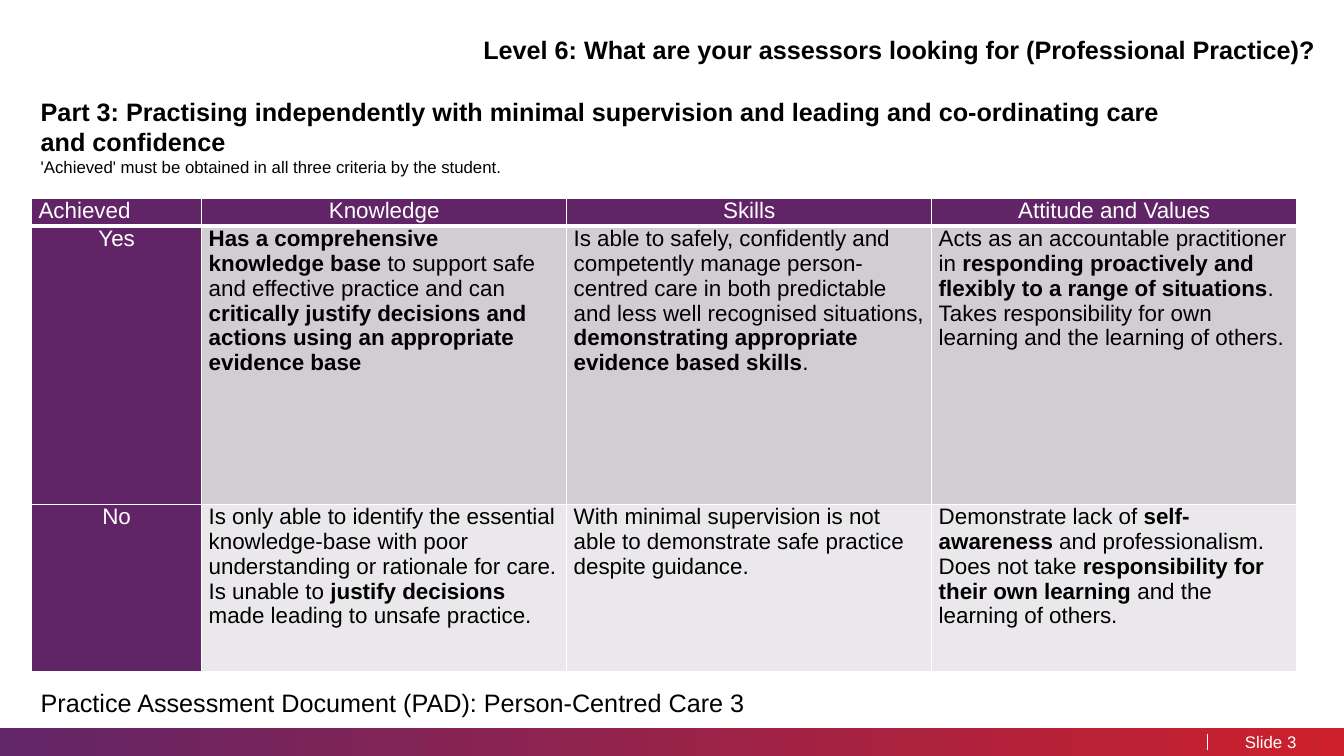
from dataclasses import dataclass

from pptx import Presentation
from pptx.dml.color import RGBColor as RGB
from pptx.enum.shapes import MSO_CONNECTOR as Connector, MSO_SHAPE as Shape
from pptx.enum.text import MSO_ANCHOR as Anchor, PP_ALIGN as Align
from pptx.oxml.ns import qn
from pptx.slide import Slide
from pptx.table import _Cell as Cell
from pptx.text.text import TextFrame, _Paragraph as Paragraph
from pptx.util import Pt
from lxml.etree import SubElement


@dataclass(frozen=True)
class Theme:
    font: str = "Arial"
    purple: str = "622567"
    red: str = "CD202C"
    head_fill: str = "612467"
    yes_fill: str = "D2CDD3"
    no_fill: str = "EAE8EB"
    white: str = "FFFFFF"
    black: str = "000000"
    heading: int = 18
    table: int = 16
    small: int = 12


THEME = Theme()


@dataclass(frozen=True)
class Line:
    text: str
    size: int
    color: str = THEME.black
    bold: bool = False
    align: Align = Align.LEFT


@dataclass(frozen=True)
class Label:
    left: float
    top: float
    width: float
    height: float
    lines: tuple[Line, ...]
    margin_x: float = 7.2
    anchor: Anchor = Anchor.TOP
    wrap: bool = True


@dataclass(frozen=True)
class Outcome:
    name: str
    height: float
    fill: str
    criteria: tuple[str, str, str]


def write_line(paragraph: Paragraph, line: Line) -> None:
    """Text between double asterisks becomes bold."""
    paragraph.alignment = line.align
    font = paragraph.font
    font.name, font.size = THEME.font, Pt(line.size)
    font.color.rgb = RGB.from_string(line.color)
    font.bold = line.bold
    parts = line.text.split("**")
    for number, part in enumerate(parts):
        if part:
            run = paragraph.add_run()
            run.text = part
            if len(parts) > 1:
                run.font.bold = number % 2 == 1


def set_margins(frame: TextFrame, x: float, y: float) -> None:
    frame.margin_left = frame.margin_right = Pt(x)
    frame.margin_top = frame.margin_bottom = Pt(y)


def add_label(slide: Slide, label: Label) -> None:
    box = slide.shapes.add_textbox(
        Pt(label.left), Pt(label.top), Pt(label.width), Pt(label.height))
    frame = box.text_frame
    frame.word_wrap = label.wrap
    frame.vertical_anchor = label.anchor
    set_margins(frame, label.margin_x, 3.6)
    for number, line in enumerate(label.lines):
        write_line(frame.add_paragraph() if number else frame.paragraphs[0], line)


def add_borders(cell: Cell, bottom: float) -> None:
    properties = cell._tc.get_or_add_tcPr()
    for side, width in (("L", 1), ("R", 1), ("T", 1), ("B", bottom)):
        border = SubElement(properties, qn(f"a:ln{side}"), w=str(Pt(width)))
        fill = SubElement(border, qn("a:solidFill"))
        SubElement(fill, qn("a:srgbClr"), val=THEME.white)


def fill_cell(cell: Cell, line: Line, fill: str, bottom: float = 1) -> None:
    add_borders(cell, bottom)
    cell.fill.solid()
    cell.fill.fore_color.rgb = RGB.from_string(fill)
    cell.margin_left = cell.margin_right = Pt(5)
    cell.margin_top = cell.margin_bottom = Pt(0)
    write_line(cell.text_frame.paragraphs[0], line)


HEADINGS = ("Achieved", "Knowledge", "Skills", "Attitude and Values")
HEADING_HEIGHT = 20
COLUMN_WIDTHS = (121.5, 260.75, 260.75, 260.75)
OUTCOMES = (
    Outcome("Yes", 198.6, THEME.yes_fill, (
        "**Has a comprehensive knowledge base **to support safe and effective practice "
        "and can **critically justify decisions and actions using an appropriate "
        "evidence base**",
        "Is able to safely, confidently and competently manage person-centred care in "
        "both predictable and less well recognised situations, **demonstrating "
        "appropriate evidence based skills**.",
        "Acts as an accountable practitioner in **responding proactively and flexibly "
        "to a range of situations**. Takes responsibility for own learning and the "
        "learning of others.")),
    Outcome("No", 119.2, THEME.no_fill, (
        "Is only able to identify the essential knowledge-base with poor understanding "
        "or rationale for care. Is unable to **justify decisions **made leading to "
        "unsafe practice.",
        "With minimal supervision is not able to demonstrate safe practice despite "
        "guidance.",
        "Demonstrate lack of **self-awareness **and professionalism. Does not take "
        "**responsibility for their own learning **and the learning of others.")),
)
BAR_TOP, BAR_HEIGHT = 520, 20
LABELS = (
    Label(889.2, BAR_TOP, 26.7, BAR_HEIGHT,
          (Line("Slide", THEME.small, THEME.white, align=Align.RIGHT),),
          margin_x=0, anchor=Anchor.MIDDLE, wrap=False),
    Label(919.4, BAR_TOP, 24, BAR_HEIGHT, (Line("3", THEME.small, THEME.white),),
          margin_x=0, anchor=Anchor.MIDDLE),
    Label(22, 65, 849, 65.5, (
        Line("Part 3: Practising independently with minimal supervision and leading "
             "and co-ordinating care and confidence", THEME.heading, bold=True),
        Line("'Achieved' must be obtained in all three criteria by the student.",
             THEME.small))),
    Label(22, 487.5, 814, 29,
          (Line("Practice Assessment Document (PAD): Person-Centred Care 3",
                THEME.heading),)),
)


def add_footer_bar(slide: Slide) -> None:
    bar = slide.shapes.add_shape(
        Shape.RECTANGLE, Pt(0), Pt(BAR_TOP), Pt(960), Pt(BAR_HEIGHT))
    bar.shadow.inherit = False
    bar.line.fill.background()
    bar.fill.gradient()
    bar.fill.gradient_angle = 0
    for stop, position, color in zip(
            bar.fill.gradient_stops, (0, 1), (THEME.purple, THEME.red)):
        stop.position = position
        stop.color.rgb = RGB.from_string(color)
    divider = slide.shapes.add_connector(
        Connector.STRAIGHT, Pt(862.4), Pt(524), Pt(862.4), Pt(536))
    divider.line.color.rgb = RGB.from_string(THEME.white)
    divider.line.width = Pt(1)
    SubElement(divider._element.spPr, qn("a:effectLst"))


def add_title(slide: Slide) -> None:
    title = slide.shapes.title
    title.left, title.top, title.width, title.height = Pt(333.4), Pt(0), Pt(606), Pt(70)
    frame = title.text_frame
    frame.word_wrap = True
    frame.vertical_anchor = Anchor.MIDDLE
    set_margins(frame, 0, 0)
    frame.margin_bottom = Pt(5.8)
    write_line(frame.paragraphs[0], Line(
        "Level 6: What are your assessors looking for (Professional Practice)?",
        THEME.heading, bold=True, align=Align.RIGHT))
    frame.paragraphs[0].line_spacing = 1.3


def add_criteria_table(slide: Slide) -> None:
    heights = (HEADING_HEIGHT, *(outcome.height for outcome in OUTCOMES))
    table = slide.shapes.add_table(
        len(heights), len(HEADINGS), Pt(22.6), Pt(141.6),
        Pt(sum(COLUMN_WIDTHS)), Pt(sum(heights))).table
    for column, width in zip(table.columns, COLUMN_WIDTHS):
        column.width = Pt(width)
    for row, height in zip(table.rows, heights):
        row.height = Pt(height)
    for number, heading in enumerate(HEADINGS):
        align = Align.CENTER if number else Align.LEFT
        fill_cell(table.cell(0, number),
                  Line(heading, THEME.table, THEME.white, align=align),
                  THEME.head_fill, bottom=3)
    for row, outcome in enumerate(OUTCOMES, 1):
        fill_cell(table.cell(row, 0),
                  Line(outcome.name, THEME.table, THEME.white, align=Align.CENTER),
                  THEME.head_fill)
        for column, criterion in enumerate(outcome.criteria, 1):
            fill_cell(table.cell(row, column), Line(criterion, THEME.table), outcome.fill)


def main() -> None:
    deck = Presentation()
    deck.slide_width, deck.slide_height = Pt(960), Pt(540)
    slide = deck.slides.add_slide(deck.slide_layouts[5])
    add_footer_bar(slide)
    add_title(slide)
    add_criteria_table(slide)
    for label in LABELS:
        add_label(slide, label)
    deck.save("out.pptx")


if __name__ == "__main__":
    main()
